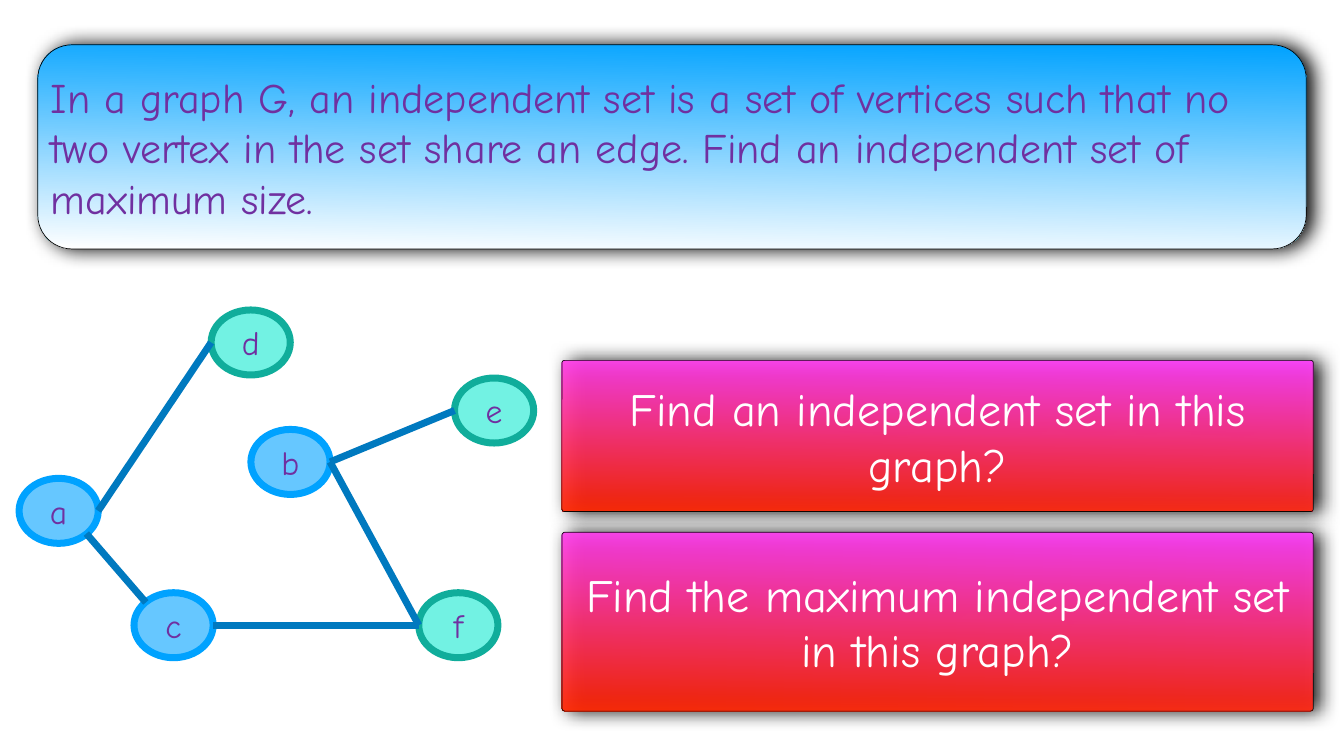
from lxml import etree
from pptx import Presentation
from pptx.dml.color import RGBColor
from pptx.enum.shapes import MSO_CONNECTOR, MSO_SHAPE
from pptx.enum.text import MSO_ANCHOR, PP_ALIGN
from pptx.oxml.ns import qn
from pptx.util import Inches, Pt

SLIDE_W, SLIDE_H = Inches(26.67), Inches(15)
COL, ROW = SLIDE_W / 100, SLIDE_H / 100  # grid of 100 columns by 100 rows

FONT = "Comic Neue"
PURPLE = RGBColor(0x70, 0x30, 0xA0)
WHITE = RGBColor(0xFF, 0xFF, 0xFF)
BLACK = RGBColor(0x00, 0x00, 0x00)
BLUE = RGBColor(0x00, 0xA2, 0xFF)
LIGHT_BLUE = RGBColor(0x66, 0xC7, 0xFF)
TEAL = RGBColor(0x10, 0xAD, 0x9B)
MINT = RGBColor(0x72, 0xF2, 0xE3)
EDGE_BLUE = RGBColor(0x00, 0x79, 0xBF)
PINK = RGBColor(0xFF, 0x40, 0xFF)
RED = RGBColor(0xFF, 0x26, 0x00)

# Vertices: column and row from the corner of the graph, then fill and outline
VERTEX_W, VERTEX_H = 5.89, 8.6
VERTICES = {
    "a": (0, 22.27, LIGHT_BLUE, BLUE),
    "d": (14.29, 0, MINT, TEAL),
    "b": (17.25, 15.8, LIGHT_BLUE, BLUE),
    "c": (8.55, 37.4, LIGHT_BLUE, BLUE),
    "e": (32.4, 9, MINT, TEAL),
    "f": (29.74, 37.4, MINT, TEAL),
}
# Points on a vertex, as shares of its width and height
LEFT, RIGHT = (0, 0.5), (1, 0.5)
TOP_LEFT, BOTTOM_RIGHT = (0.15, 0.15), (0.85, 0.85)
EDGES = [
    ("d", LEFT, "a", RIGHT),
    ("c", TOP_LEFT, "a", BOTTOM_RIGHT),
    ("e", LEFT, "b", RIGHT),
    ("f", LEFT, "b", RIGHT),
    ("f", LEFT, "c", RIGHT),
]


def grid(col, row):
    return round(col * COL), round(row * ROW)


def add_labelled(slide, preset, box, text, size, color, align):
    left, top, width, height = box
    shape = slide.shapes.add_shape(preset, *grid(left, top), *grid(width, height))
    shape.shadow.inherit = False
    frame = shape.text_frame
    frame.word_wrap = True
    frame.vertical_anchor = MSO_ANCHOR.MIDDLE
    frame.margin_left = frame.margin_right = Inches(0.06)
    frame.margin_top = frame.margin_bottom = Inches(0.06)
    frame.text = text
    paragraph = frame.paragraphs[0]
    paragraph.alignment = align
    font = paragraph.runs[0].font
    font.name, font.size, font.color.rgb = FONT, Pt(size), color
    return shape


def style_panel(shape, top_color, bottom_color, opacity=100):
    """Vertical gradient, thin black outline and a soft shadow to the right."""
    shape.fill.gradient()
    shape.fill.gradient_angle = 269
    for stop, color in zip(shape.fill.gradient_stops, (top_color, bottom_color)):
        stop.color.rgb = color
    shape.line.color.rgb = BLACK
    shape.line.width = Pt(1)
    properties = shape._element.spPr
    if opacity < 100:
        for color in list(properties.iter(qn("a:srgbClr"))):
            etree.SubElement(color, qn("a:alpha"), val=str(opacity * 1000))
    effects = properties.find(qn("a:effectLst"))
    shadow = etree.SubElement(effects, qn("a:outerShdw"), blurRad=str(Pt(28)),
                              dist=str(Pt(9)), dir="0", rotWithShape="0")
    shadow_color = etree.SubElement(shadow, qn("a:srgbClr"), val=str(BLACK))
    etree.SubElement(shadow_color, qn("a:alpha"), val="97000")


def add_definition(slide, box):
    text = ("In a graph G, an independent set is a set of vertices such that no two "
            "vertex in the set share an edge. Find an independent set of maximum size.")
    panel = add_labelled(slide, MSO_SHAPE.ROUNDED_RECTANGLE, box, text, 60,
                         PURPLE, PP_ALIGN.LEFT)
    style_panel(panel, BLUE, WHITE)


def add_graph(slide, left, top):
    for name, (col, row, fill, outline) in VERTICES.items():
        box = (left + col, top + row, VERTEX_W, VERTEX_H)
        vertex = add_labelled(slide, MSO_SHAPE.OVAL, box, name, 48,
                              PURPLE, PP_ALIGN.CENTER)
        vertex.fill.solid()
        vertex.fill.fore_color.rgb = fill
        vertex.line.color.rgb = outline
        vertex.line.width = Pt(10)

    def point(name, site):
        col, row = VERTICES[name][:2]
        return grid(left + col + site[0] * VERTEX_W, top + row + site[1] * VERTEX_H)

    for start, start_site, end, end_site in EDGES:
        edge = slide.shapes.add_connector(
            MSO_CONNECTOR.STRAIGHT, *point(start, start_site), *point(end, end_site))
        edge.line.color.rgb = EDGE_BLUE
        edge.line.width = Pt(10)
        etree.SubElement(edge._element.spPr, qn("a:effectLst"))


def add_questions(slide, left, top, width, gap):
    questions = [
        ("Find an independent set in this graph?", 20),
        ("Find the maximum independent set in this graph?", 23.67),
    ]
    for question, height in questions:
        panel = add_labelled(slide, MSO_SHAPE.ROUNDED_RECTANGLE,
                             (left, top, width, height), question, 66,
                             WHITE, PP_ALIGN.CENTER)
        panel.adjustments[0] = 0.017
        style_panel(panel, PINK, RED, opacity=93)
        top += height + gap


def main():
    deck = Presentation()
    deck.slide_width, deck.slide_height = SLIDE_W, SLIDE_H
    slide = deck.slides.add_slide(deck.slide_layouts[6])
    add_definition(slide, (2.81, 5.93, 94.38, 27))
    add_graph(slide, left=1.42, top=41)
    add_questions(slide, left=41.81, top=47.67, width=55.91, gap=2.73)
    deck.save("out.pptx")


if __name__ == "__main__":
    main()
